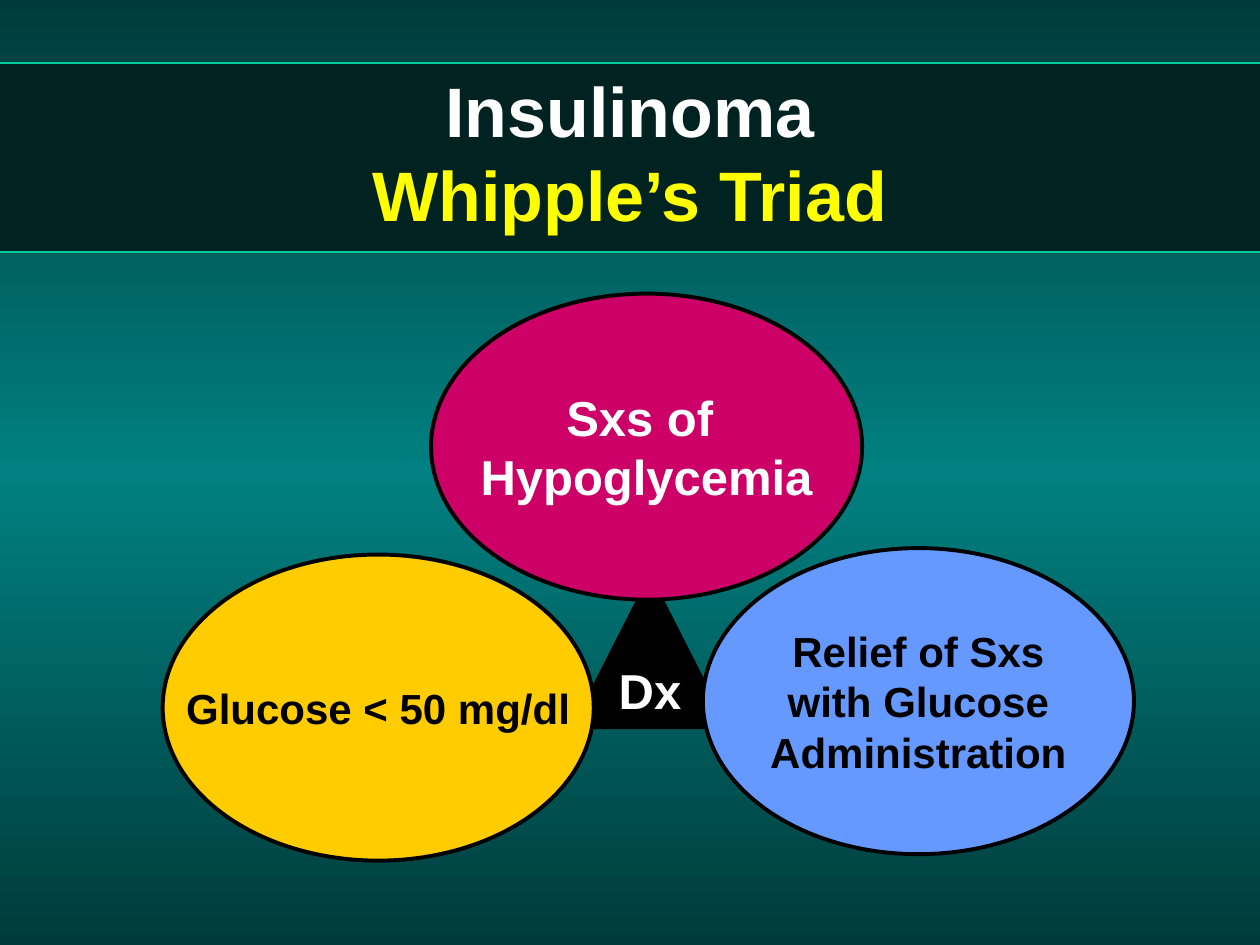
from copy import deepcopy
from dataclasses import dataclass

from pptx import Presentation
from pptx.dml.color import RGBColor
from pptx.enum.shapes import MSO_SHAPE
from pptx.enum.text import MSO_ANCHOR, PP_ALIGN
from pptx.util import Cm, Pt


@dataclass(frozen=True)
class Theme:
    font: str = "Arial"
    deep: str = "003B3B"
    teal: str = "008080"
    band: str = "002221"
    edge: str = "00CC99"
    white: str = "FFFFFF"
    black: str = "000000"
    yellow: str = "FFFF00"
    gold: str = "FFCC00"
    blue: str = "6699FF"
    pink: str = "CC0066"
    title: int = 40
    large: int = 28
    body: int = 24


def write(para, text, *, font, size, color, bold=True):
    run = para.add_run()
    run.text = text
    run.font.name = font
    run.font.size = Pt(size)
    run.font.bold = bold
    run.font.color.rgb = RGBColor.from_string(color)


class Deck:
    def __init__(self, theme, slide):
        self.theme = theme
        self.slide = slide

    def backdrop(self):
        """Fill the background with a vertical dark-light-dark gradient."""
        fill = self.slide.background.fill
        fill.gradient()
        fill.gradient_angle = 90
        stops = self.slide.element.xpath(".//p:bg//a:gsLst")[0]
        stops.append(deepcopy(stops[0]))
        shades = (self.theme.deep, self.theme.teal, self.theme.deep)
        for i, (stop, shade) in enumerate(zip(fill.gradient_stops, shades)):
            stop.position = i / 2
            stop.color.rgb = RGBColor.from_string(shade)

    def shape(self, kind, box, fill, line, width):
        item = self.slide.shapes.add_shape(kind, *map(Cm, box))
        item.shadow.inherit = False
        item.fill.solid()
        item.fill.fore_color.rgb = RGBColor.from_string(fill)
        item.line.color.rgb = RGBColor.from_string(line)
        item.line.width = Pt(width)
        return item

    def label(self, item, lines, size, color):
        """Centre one paragraph per line in a shape, without wrapping."""
        frame = item.text_frame
        frame.word_wrap = False
        frame.vertical_anchor = MSO_ANCHOR.MIDDLE
        for i, text in enumerate(lines):
            para = frame.add_paragraph() if i else frame.paragraphs[0]
            para.alignment = PP_ALIGN.CENTER
            write(para, text, font=self.theme.font, size=size, color=color)

    def title(self, box, parts):
        """Stack coloured (text, color) parts as lines of one paragraph."""
        frame = self.slide.shapes.add_textbox(*map(Cm, box)).text_frame
        frame.word_wrap = True
        frame.vertical_anchor = MSO_ANCHOR.MIDDLE
        para = frame.paragraphs[0]
        para.alignment = PP_ALIGN.CENTER
        for i, (text, color) in enumerate(parts):
            if i:
                para.add_line_break()
            write(para, text, font=self.theme.font, size=self.theme.title,
                  color=color)


def main():
    look = Theme()
    show = Presentation()
    show.slide_width, show.slide_height = Cm(25.4), Cm(19.05)
    deck = Deck(look, show.slides.add_slide(show.slide_layouts[6]))

    deck.backdrop()
    deck.shape(MSO_SHAPE.RECTANGLE, (-1.47, 1.27, 28.14, 3.81),
               look.band, look.edge, 0.75)
    deck.title((1.9, 1.47, 21.6, 3.18),
               [("Insulinoma", look.white), ("Whipple’s Triad", look.yellow)])

    hub = deck.shape(MSO_SHAPE.ISOSCELES_TRIANGLE, (11.53, 11.58, 3.15, 3.1),
                     look.black, look.black, 1)
    deck.label(hub, ["Dx"], look.large, look.white)

    ovals = [
        (3.28, 11.18, look.gold, look.body, look.black,
         ["Glucose < 50 mg/dl"]),
        (14.17, 11.05, look.blue, look.body, look.black,
         ["Relief of Sxs", "with Glucose", "Administration"]),
        (8.69, 5.92, look.pink, look.large, look.white,
         ["Sxs of ", "Hypoglycemia"]),
    ]
    for left, top, fill, size, ink, lines in ovals:
        oval = deck.shape(MSO_SHAPE.OVAL, (left, top, 8.69, 6.17),
                          fill, look.black, 2.25)
        deck.label(oval, lines, size, ink)

    show.save("out.pptx")


if __name__ == "__main__":
    main()
